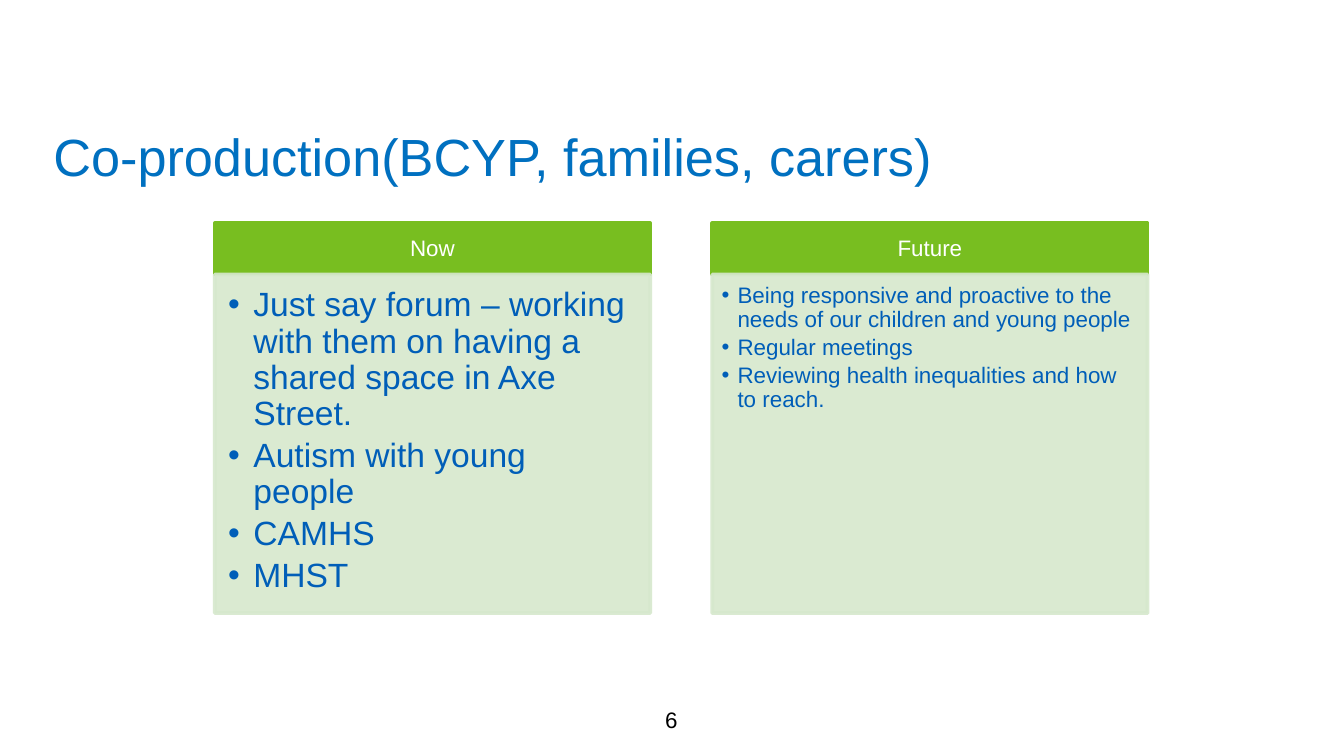
from dataclasses import dataclass

from lxml import etree
from pptx import Presentation
from pptx.dml.color import RGBColor
from pptx.enum.shapes import MSO_SHAPE
from pptx.enum.text import MSO_ANCHOR, PP_ALIGN
from pptx.oxml.ns import qn
from pptx.util import Cm, Pt

RECTANGLE = MSO_SHAPE.RECTANGLE
TOP, MIDDLE = MSO_ANCHOR.TOP, MSO_ANCHOR.MIDDLE
LEFT, CENTER = PP_ALIGN.LEFT, PP_ALIGN.CENTER

FONT = "Arial"
COLORS = {
    "title": "0070C0",
    "header": "78BE20",
    "header_text": "FFFFFF",
    "panel": "D6E8CD",
    "panel_text": "005EB8",
    "page_number": "000000",
}

COLUMN_LEFT, COLUMN_STEP, COLUMN_WIDTH = 4.06, 9.4, 8.23
HEADER_TOP, HEADER_HEIGHT, PANEL_HEIGHT = 4.22, 0.97, 6.4
LINE_SPACING = 0.9
SPACE_AFTER_RATIO = 0.17
PANEL_OPACITY = 90


@dataclass(frozen=True)
class Column:
    heading: str
    points: tuple[str, ...]
    size: int
    indent: float
    insets: tuple[float, float, float, float]


COLUMNS = (
    Column(
        "Now",
        (
            "Just say forum – working with them on having a shared space in Axe Street.",
            "Autism with young people",
            "CAMHS",
            "MHST",
        ),
        18, 0.48, (0.25, 0.25, 0.36, 0.41),
    ),
    Column(
        "Future",
        (
            "Being responsive and proactive to the needs of our children and young people",
            "Regular meetings",
            "Reviewing health inequalities and how to reach.",
        ),
        12, 0.3, (0.18, 0.18, 0.23, 0.25),
    ),
)


def set_frame(frame, insets: tuple[float, float, float, float], anchor) -> None:
    frame.word_wrap = True
    frame.vertical_anchor = anchor
    (frame.margin_left, frame.margin_top,
     frame.margin_right, frame.margin_bottom) = map(Cm, insets)


def add_run(paragraph, text: str, size: int, color: str, align=LEFT) -> None:
    paragraph.alignment = align
    run = paragraph.add_run()
    run.text = text
    run.font.name = FONT
    run.font.size = Pt(size)
    run.font.color.rgb = RGBColor.from_string(COLORS[color])


def add_bullet(paragraph, indent: float) -> None:
    properties = paragraph._p.get_or_add_pPr()
    properties.set("marL", str(Cm(indent)))
    properties.set("indent", str(-Cm(indent)))
    etree.SubElement(properties, qn("a:buFont")).set("typeface", FONT)
    etree.SubElement(properties, qn("a:buChar")).set("char", "•")


def add_label(slide, text: str, box: tuple[float, float, float, float],
              size: int, color: str, anchor=TOP, align=LEFT) -> None:
    frame = slide.shapes.add_textbox(*map(Cm, box)).text_frame
    set_frame(frame, (0.25, 0.13, 0.25, 0.13), anchor)
    add_run(frame.paragraphs[0], text, size, color, align)


def add_block(slide, left: float, top: float, height: float, color: str,
              opacity: int = 100):
    block = slide.shapes.add_shape(
        RECTANGLE, Cm(left), Cm(top), Cm(COLUMN_WIDTH), Cm(height))
    block.shadow.inherit = False
    block.fill.solid()
    block.line.width = Pt(2)
    for fill in (block.fill, block.line.fill):
        fill.solid()
        fill.fore_color.rgb = RGBColor.from_string(COLORS[color])
    if opacity < 100:
        for rgb in block._element.spPr.iter(qn("a:srgbClr")):
            etree.SubElement(rgb, qn("a:alpha")).set("val", str(opacity * 1000))
    return block


def add_column(slide, column: Column, left: float) -> None:
    header = add_block(slide, left, HEADER_TOP, HEADER_HEIGHT, "header").text_frame
    set_frame(header, (0.23, 0.13, 0.23, 0.13), MIDDLE)
    header.paragraphs[0].line_spacing = LINE_SPACING
    add_run(header.paragraphs[0], column.heading, 12, "header_text", CENTER)

    panel = add_block(slide, left, HEADER_TOP + HEADER_HEIGHT, PANEL_HEIGHT,
                      "panel", PANEL_OPACITY).text_frame
    set_frame(panel, column.insets, TOP)
    for index, point in enumerate(column.points):
        paragraph = panel.add_paragraph() if index else panel.paragraphs[0]
        add_bullet(paragraph, column.indent)
        paragraph.level = 1
        paragraph.line_spacing = LINE_SPACING
        paragraph.space_after = Pt(column.size * SPACE_AFTER_RATIO)
        add_run(paragraph, point, column.size, "panel_text")


def main() -> None:
    presentation = Presentation()
    presentation.slide_width, presentation.slide_height = Cm(25.4), Cm(14.29)
    slide = presentation.slides.add_slide(presentation.slide_layouts[6])

    add_label(slide, "Co-production(BCYP, families, carers)",
              (0.76, 2.21, 18.67, 1.55), 28, "title")
    add_label(slide, "6", (9.73, 13.23, 5.92, 0.76), 12, "page_number",
              MIDDLE, CENTER)
    for index, column in enumerate(COLUMNS):
        add_column(slide, column, COLUMN_LEFT + index * COLUMN_STEP)

    presentation.save("out.pptx")


if __name__ == "__main__":
    main()
